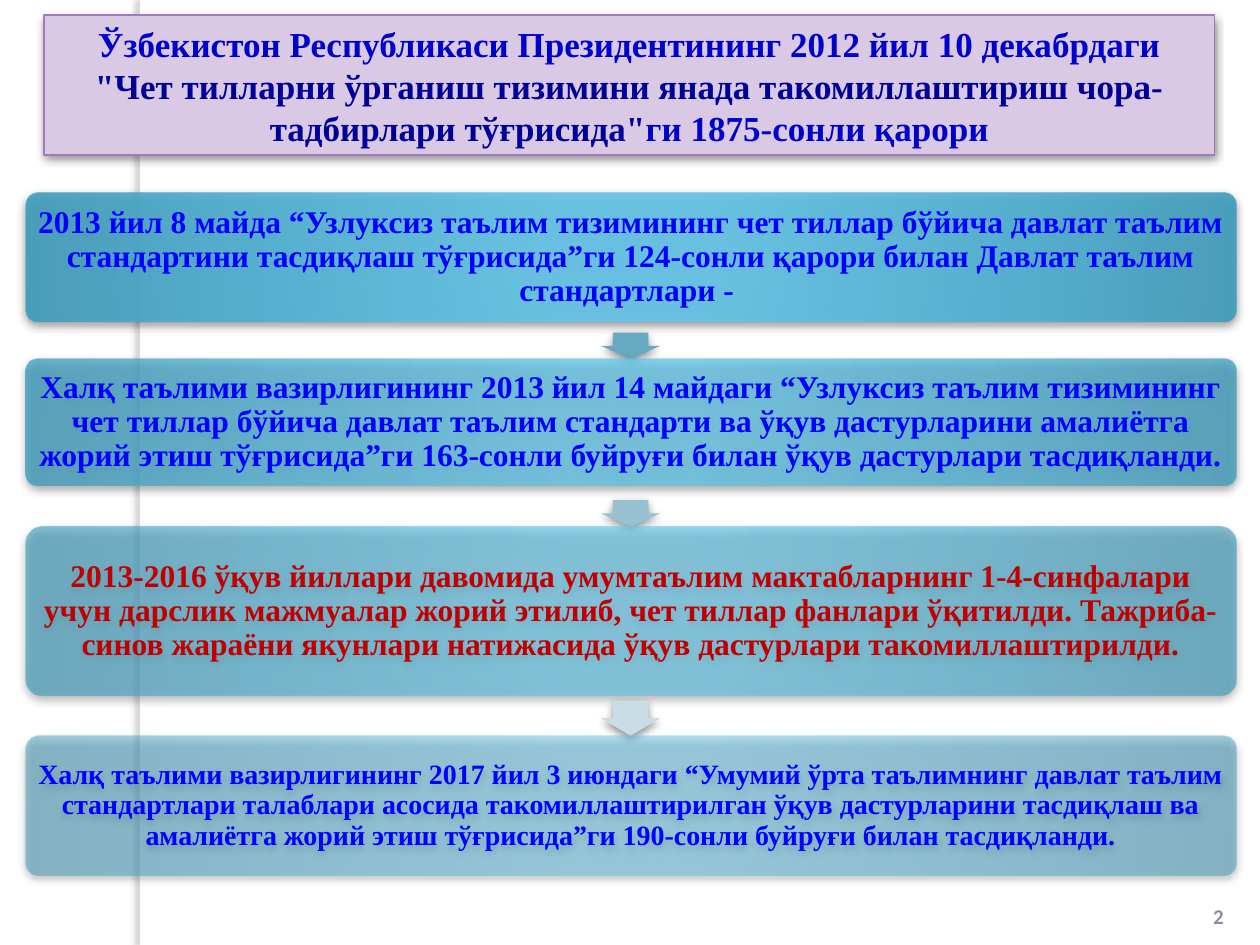
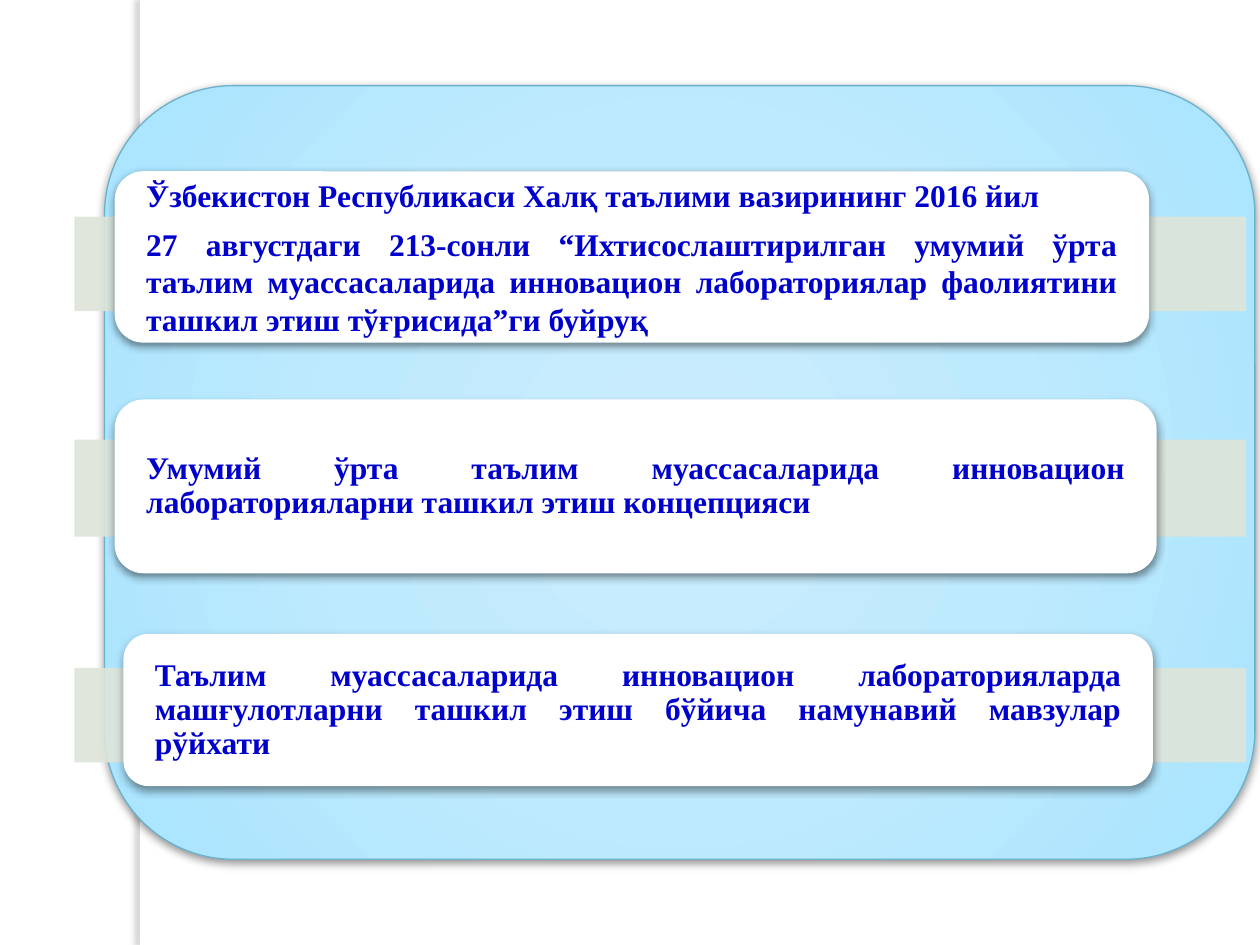
"""Build two slides on the decrees behind foreign-language teaching and innovation laboratories."""
from lxml import etree
from pptx import Presentation
from pptx.dml.color import RGBColor
from pptx.enum.shapes import MSO_SHAPE
from pptx.enum.text import MSO_ANCHOR, MSO_AUTO_SIZE, PP_ALIGN
from pptx.oxml.ns import qn
from pptx.util import Inches, Pt

RECTANGLE, ROUNDED, DOWN_ARROW = MSO_SHAPE.RECTANGLE, MSO_SHAPE.ROUNDED_RECTANGLE, MSO_SHAPE.DOWN_ARROW
MIDDLE, BOTTOM = MSO_ANCHOR.MIDDLE, MSO_ANCHOR.BOTTOM
CENTER, JUSTIFY = PP_ALIGN.CENTER, PP_ALIGN.JUSTIFY
NO_AUTOFIT = MSO_AUTO_SIZE.NONE

SERIF, SANS = "Times New Roman", "Calibri"
WHITE, BLUE, NAVY, BRIGHT_BLUE, RED = "FFFFFF", "0000CC", "000099", "0000FF", "C00000"
LILAC, PURPLE, STRIPE, PANEL_LINE, NUMBER_GREY = "DAC9E4", "A379BB", "DEE4D9", "6BB1C9", "948AA0"
STEP_GRADIENT = [(0, "65C5E9"), (15, "64C5E8"), (62, "50B1D4"), (97, "439FBF"), (100, "3C9DBE")]
PANEL_GRADIENT = [(0, "CBEDFD"), (50, "BEEAFD"), (97, "A9E4FF"), (100, "A3E3FF")]
SOFT_SHADOW = ("000000", 43, 5, 2, 90)
BAND_SHADOW = ("646068", 25, 3, 3, 180)

TITLE_RUNS = [
    ("Ўзбекистон Республикаси Президентининг 2012 йил 10 декабрдаги ", BLUE),
    ("\"Чет тилларни ўрганиш тизимини янада такомиллаштириш чора-тадбирлари тўғрисида\"", NAVY),
    ("ги 1875-сонли қарори", BLUE),
]
STEPS = [
    {"top": 1.53, "height": 1.02, "opacity": 90, "size": 18, "color": BRIGHT_BLUE,
     "text": "2013 йил 8 майда “Узлуксиз таълим тизимининг чет тиллар бўйича давлат таълим "
             "стандартини тасдиқлаш тўғрисида”ги 124-сонли қарори билан Давлат таълим стандартлари - "},
    {"top": 2.85, "height": 1, "opacity": 77, "size": 18, "color": BRIGHT_BLUE, "arrow": ("66A9C0", 0.21),
     "text": "Халқ таълими вазирлигининг 2013 йил 14 майдаги “Узлуксиз таълим тизимининг чет тиллар "
             "бўйича давлат таълим стандарти ва ўқув дастурларини амалиётга жорий этиш тўғрисида”ги "
             "163-сонли буйруғи билан ўқув дастурлари тасдиқланди."},
    {"top": 4.18, "height": 1.34, "opacity": 63, "size": 18, "color": RED, "arrow": ("98C2D3", 0.21),
     "text": "2013-2016 ўқув йиллари давомида умумтаълим мактабларнинг 1-4-синфалари учун дарслик "
             "мажмуалар жорий этилиб, чет тиллар фанлари ўқитилди. Тажриба-синов жараёни якунлари "
             "натижасида ўқув дастурлари такомиллаштирилди."},
    {"top": 5.84, "height": 1.11, "opacity": 50, "size": 16, "color": BRIGHT_BLUE, "arrow": ("C8DDE6", 0.28),
     "text": "Халқ таълими вазирлигининг 2017 йил 3 июндаги “Умумий ўрта таълимнинг давлат таълим "
             "стандартлари талаблари асосида такомиллаштирилган ўқув дастурларини тасдиқлаш ва "
             "амалиётга жорий этиш тўғрисида”ги 190-сонли буйруғи билан тасдиқланди."},
]
DOCUMENTS = [
    {"card": (0.91, 1.36, 8.21, 1.36), "stripe": (1.72, 0.75), "spacing": 1.0,
     "texts": ["Ўзбекистон Республикаси Халқ таълими вазирининг 2016 йил",
               "27 августдаги 213-сонли “Ихтисослаштирилган умумий ўрта таълим муассасаларида "
               "инновацион лабораториялар фаолиятини ташкил этиш тўғрисида”ги буйруқ"]},
    {"card": (0.91, 3.17, 8.27, 1.38), "stripe": (3.49, 0.77), "spacing": 0.9,
     "texts": ["Умумий ўрта таълим муассасаларида инновацион лабораторияларни ташкил этиш концепцияси"]},
    {"card": (0.98, 5.03, 8.17, 1.21), "stripe": (5.3, 0.75), "spacing": 0.9,
     "texts": ["Таълим муассасаларида инновацион лабораторияларда машғулотларни ташкил этиш бўйича "
               "намунавий мавзулар рўйхати"]},
]


def rgb(color):
    return RGBColor.from_string(color)


def add_color(parent, color, opacity):
    element = etree.SubElement(parent, qn("a:srgbClr"), val=color)
    if opacity < 100:
        etree.SubElement(element, qn("a:alpha"), val=str(opacity * 1000))


def fill_solid(shape, color, opacity=100):
    shape.fill.background()
    blank = shape.element.spPr.find(qn("a:noFill"))
    solid = etree.Element(qn("a:solidFill"))
    add_color(solid, color, opacity)
    blank.getparent().replace(blank, solid)


def fill_radial(shape, stops, opacity=100):
    shape.fill.background()
    blank = shape.element.spPr.find(qn("a:noFill"))
    gradient = etree.Element(qn("a:gradFill"), rotWithShape="1")
    stop_list = etree.SubElement(gradient, qn("a:gsLst"))
    for position, color in stops:
        add_color(etree.SubElement(stop_list, qn("a:gs"), pos=str(position * 1000)), color, opacity)
    focus = etree.SubElement(gradient, qn("a:path"), path="circle")
    etree.SubElement(focus, qn("a:fillToRect"), l="50000", t="50000", r="50000", b="50000")
    blank.getparent().replace(blank, gradient)


def outline(shape, color):
    shape.line.color.rgb = rgb(color)
    shape.line.width = Pt(0.75)


def cast_shadow(shape, color, opacity, blur, distance, angle):
    shape.shadow.inherit = False
    effects = shape.element.spPr.find(qn("a:effectLst"))
    shadow = etree.SubElement(effects, qn("a:outerShdw"), blurRad=str(Pt(blur)), dist=str(Pt(distance)),
                              dir=str(angle * 60000), algn="ctr", rotWithShape="0")
    add_color(shadow, color, opacity)


def add_figure(slide, preset, box, shadow=SOFT_SHADOW):
    shape = slide.shapes.add_shape(preset, *map(Inches, box))
    shape.line.fill.background()
    shape.shadow.inherit = False
    if shadow:
        cast_shadow(shape, *shadow)
    return shape


def add_run(paragraph, text, size, color, font=SERIF):
    run = paragraph.add_run()
    run.text = text
    run.font.name, run.font.size, run.font.bold = font, Pt(size), True
    run.font.color.rgb = rgb(color)


def write_card(shape, texts, size, color, alignment, spacing, margins):
    corner = 0.29 * shape.adjustments[0] * shape.height
    side, edge = (max(0, int(Inches(margin) - corner)) for margin in margins)
    frame = shape.text_frame
    frame.word_wrap, frame.vertical_anchor = True, MIDDLE
    frame.margin_left = frame.margin_right = side
    frame.margin_top = frame.margin_bottom = edge
    for index, text in enumerate(texts):
        paragraph = frame.add_paragraph() if index else frame.paragraphs[0]
        paragraph.alignment, paragraph.line_spacing = alignment, spacing
        paragraph.space_after = Pt(0.35 * size)
        add_run(paragraph, text, size, color)


def add_master_band(presentation, slide):
    band = add_figure(slide, RECTANGLE, (1.11, 0, 0.08, 7.5), BAND_SHADOW)
    fill_solid(band, WHITE)
    band.element.nvSpPr.cNvPr.set("id", "99")
    presentation.slide_master.shapes.element.insert(2, band.element)


def add_title(slide):
    title = slide.shapes.title
    title.left, title.top, title.width, title.height = map(Inches, (0.35, 0.12, 9.29, 1.11))
    fill_solid(title, LILAC)
    outline(title, PURPLE)
    cast_shadow(title, *SOFT_SHADOW)
    frame = title.text_frame
    frame.word_wrap, frame.auto_size, frame.vertical_anchor = True, NO_AUTOFIT, MIDDLE
    paragraph = frame.paragraphs[0]
    paragraph.alignment = CENTER
    for text, color in TITLE_RUNS:
        add_run(paragraph, text, 20, color)


def add_slide_number(slide, number):
    frame = slide.shapes.add_textbox(*map(Inches, (9.42, 6.9, 0.5, 0.52))).text_frame
    frame.word_wrap, frame.vertical_anchor = True, BOTTOM
    frame.paragraphs[0].alignment = CENTER
    add_run(frame.paragraphs[0], number, 12, NUMBER_GREY, SANS)


def build_decree_slide(slide):
    add_title(slide)
    for step in STEPS:
        if "arrow" in step:
            color, length = step["arrow"]
            arrow = add_figure(slide, DOWN_ARROW, (4.77, step["top"] - length, 0.47, length))
            arrow.adjustments[0], arrow.adjustments[1] = 0.6, 0.5
            fill_solid(arrow, color)
        card = add_figure(slide, ROUNDED, (0.2, step["top"], 9.61, step["height"]))
        card.adjustments[0] = 0.1
        fill_radial(card, STEP_GRADIENT, step["opacity"])
        write_card(card, [step["text"]], step["size"], step["color"], CENTER, 0.9, (0.07, 0.07))
    add_slide_number(slide, "2")


def build_laboratory_slide(slide):
    panel = add_figure(slide, ROUNDED, (0.83, 0.68, 9.13, 6.14))
    fill_radial(panel, PANEL_GRADIENT)
    outline(panel, PANEL_LINE)
    for document in DOCUMENTS:
        top, height = document["stripe"]
        stripe = add_figure(slide, RECTANGLE, (0.59, top, 9.3, height), None)
        fill_solid(stripe, STRIPE, 90)
        card = add_figure(slide, ROUNDED, document["card"])
        fill_solid(card, WHITE)
        write_card(card, document["texts"], 18, BLUE, JUSTIFY, document["spacing"], (0.25, 0))


def main():
    presentation = Presentation()
    presentation.slide_width, presentation.slide_height = Inches(10), Inches(7.5)
    title_only, blank = presentation.slide_layouts[5], presentation.slide_layouts[6]
    decree_slide = presentation.slides.add_slide(title_only)
    add_master_band(presentation, decree_slide)
    build_decree_slide(decree_slide)
    build_laboratory_slide(presentation.slides.add_slide(blank))
    presentation.save("out.pptx")


if __name__ == "__main__":
    main()
